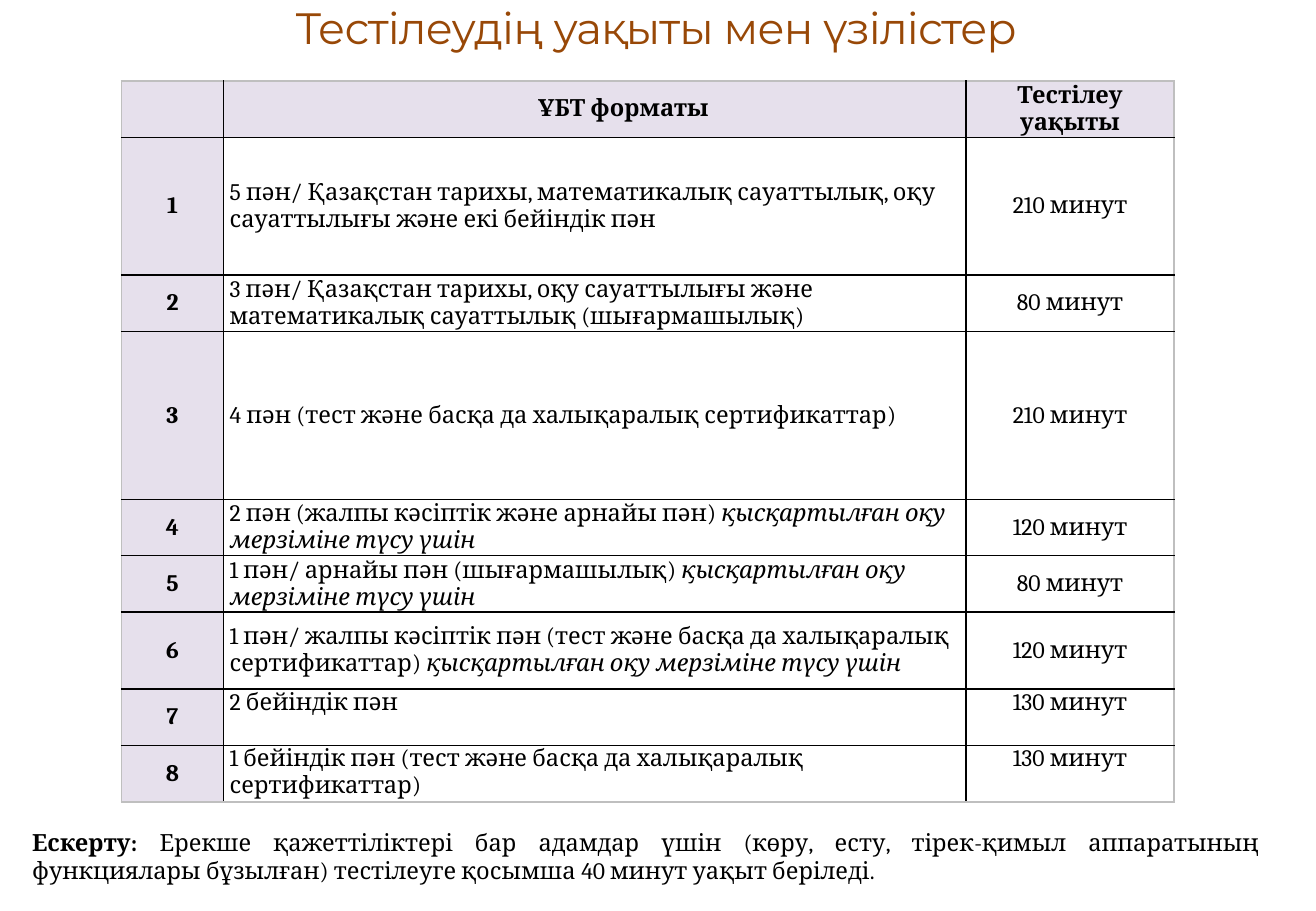
from dataclasses import dataclass

from lxml.etree import SubElement
from pptx import Presentation
from pptx.dml.color import RGBColor
from pptx.enum.text import MSO_ANCHOR as Anchor, PP_ALIGN as Align
from pptx.oxml.ns import qn
from pptx.util import Pt


@dataclass(frozen=True)
class Theme:
    title_font: str = "Montserrat"
    body_font: str = "Cambria"
    title_size: int = 26
    body_size: int = 14
    title_color: str = "984807"
    text_color: str = "000000"
    label_fill: str = "E6E0EC"
    cell_fill: str = "FFFFFF"
    inner_line: str = "000000"
    outer_line: str = "BFBFBF"


THEME = Theme()
SHORTENED = "қысқартылған оқу мерзіміне түсу үшін"
COLUMN_WIDTHS = (60.5, 440, 123.5)
ROW_HEIGHT = 33.5
HEADERS = ("", "ҰБТ форматы", "Тестілеу уақыты")
FORMATS = (
    ("5 пән/ Қазақстан тарихы, математикалық сауаттылық, оқу сауаттылығы және екі бейіндік пән",
     "", 210, 81.5, Anchor.MIDDLE),
    ("3 пән/ Қазақстан тарихы, оқу сауаттылығы және математикалық сауаттылық (шығармашылық)",
     "", 80, ROW_HEIGHT, Anchor.MIDDLE),
    ("4 пән (тест және басқа да халықаралық сертификаттар)",
     "", 210, 99.5, Anchor.MIDDLE),
    ("2 пән (жалпы кәсіптік және арнайы пән) ",
     SHORTENED, 120, ROW_HEIGHT, Anchor.MIDDLE),
    ("1 пән/ арнайы пән (шығармашылық) ",
     SHORTENED, 80, ROW_HEIGHT, Anchor.MIDDLE),
    ("1 пән/ жалпы кәсіптік пән (тест және басқа да халықаралық сертификаттар) ",
     SHORTENED, 120, 45.5, Anchor.MIDDLE),
    ("2 бейіндік пән", "", 130, ROW_HEIGHT, Anchor.TOP),
    ("1 бейіндік пән (тест және басқа да халықаралық сертификаттар)",
     "", 130, ROW_HEIGHT, Anchor.TOP),
)


def add_run(paragraph, text, bold=False, italic=False,
            name=THEME.body_font, size=THEME.body_size, color=THEME.text_color):
    run = paragraph.add_run()
    run.text = text
    run.font.name = name
    run.font.size = Pt(size)
    run.font.bold = bold
    run.font.italic = italic
    run.font.color.rgb = RGBColor.from_string(color)
    return run


def set_margins(target, horizontal, vertical):
    target.margin_left = target.margin_right = Pt(horizontal)
    target.margin_top = target.margin_bottom = Pt(vertical)


def add_title(slide, text):
    title = slide.shapes.title
    title.left, title.top, title.width, title.height = Pt(-1.5), Pt(0), Pt(781), Pt(32)
    frame = title.text_frame
    set_margins(frame, 0, 0)
    frame.vertical_anchor = Anchor.MIDDLE
    paragraph = frame.paragraphs[0]
    paragraph.alignment = Align.CENTER
    run = add_run(paragraph, text, name=THEME.title_font,
                  size=THEME.title_size, color=THEME.title_color)
    run._r.get_or_add_rPr().set("spc", "-50")


def add_borders(cell, outer_sides):
    properties = cell._tc.get_or_add_tcPr()
    for side in ("L", "R", "T", "B"):
        color = THEME.outer_line if side in outer_sides else THEME.inner_line
        line = SubElement(properties, qn(f"a:ln{side}"), w=str(Pt(1)))
        fill = SubElement(line, qn("a:solidFill"))
        SubElement(fill, qn("a:srgbClr"), val=color)


def fill_cell(table, row, column, runs, anchor=Anchor.MIDDLE):
    cell = table.cell(row, column)
    outer_sides = {side for side, on_edge in (
        ("L", column == 0), ("R", column == len(HEADERS) - 1),
        ("T", row == 0), ("B", row == len(FORMATS))) if on_edge}
    add_borders(cell, outer_sides)
    is_label = row == 0 or column == 0
    cell.fill.solid()
    cell.fill.fore_color.rgb = RGBColor.from_string(
        THEME.label_fill if is_label else THEME.cell_fill)
    set_margins(cell, 3.6, 0)
    cell.vertical_anchor = anchor
    paragraph = cell.text_frame.paragraphs[0]
    paragraph.alignment = Align.LEFT if column == 1 and row else Align.CENTER
    paragraph.space_after = Pt(2)
    for text, italic in runs:
        if text:
            add_run(paragraph, text, bold=is_label, italic=italic)
    return paragraph


def add_format_table(slide):
    heights = [ROW_HEIGHT] + [entry[3] for entry in FORMATS]
    table = slide.shapes.add_table(
        len(heights), len(HEADERS), Pt(72), Pt(48),
        Pt(sum(COLUMN_WIDTHS)), Pt(sum(heights))).table
    table.first_row = table.horz_banding = False
    for column, width in zip(table.columns, COLUMN_WIDTHS):
        column.width = Pt(width)
    for row, height in zip(table.rows, heights):
        row.height = Pt(height)

    headings = [fill_cell(table, 0, column, [(text, False)])
                for column, text in enumerate(HEADERS)]
    headings[1]._p.get_or_add_pPr().set("indent", str(Pt(34)))
    for row, (subjects, purpose, minutes, _, anchor) in enumerate(FORMATS, 1):
        fill_cell(table, row, 0, [(str(row), False)])
        fill_cell(table, row, 1, [(subjects, False), (purpose, True)], anchor)
        fill_cell(table, row, 2, [(f"{minutes} минут", False)], anchor)


def add_note(slide, label, text):
    frame = slide.shapes.add_textbox(Pt(12), Pt(487), Pt(741.5), Pt(41)).text_frame
    frame.word_wrap = True
    set_margins(frame, 7.2, 3.6)
    paragraph = frame.paragraphs[0]
    paragraph.alignment = Align.JUSTIFY
    add_run(paragraph, label, bold=True)
    add_run(paragraph, text)


def main():
    presentation = Presentation()
    presentation.slide_width, presentation.slide_height = Pt(780), Pt(540)
    slide = presentation.slides.add_slide(presentation.slide_layouts[5])
    add_title(slide, "Тестілеудің уақыты мен үзілістер")
    add_format_table(slide)
    add_note(slide, "Ескерту: ",
             "Ерекше қажеттіліктері бар адамдар үшін (көру, есту, тірек-қимыл аппаратының "
             "функциялары бұзылған) тестілеуге қосымша 40 минут уақыт беріледі.")
    presentation.save("out.pptx")


if __name__ == "__main__":
    main()
